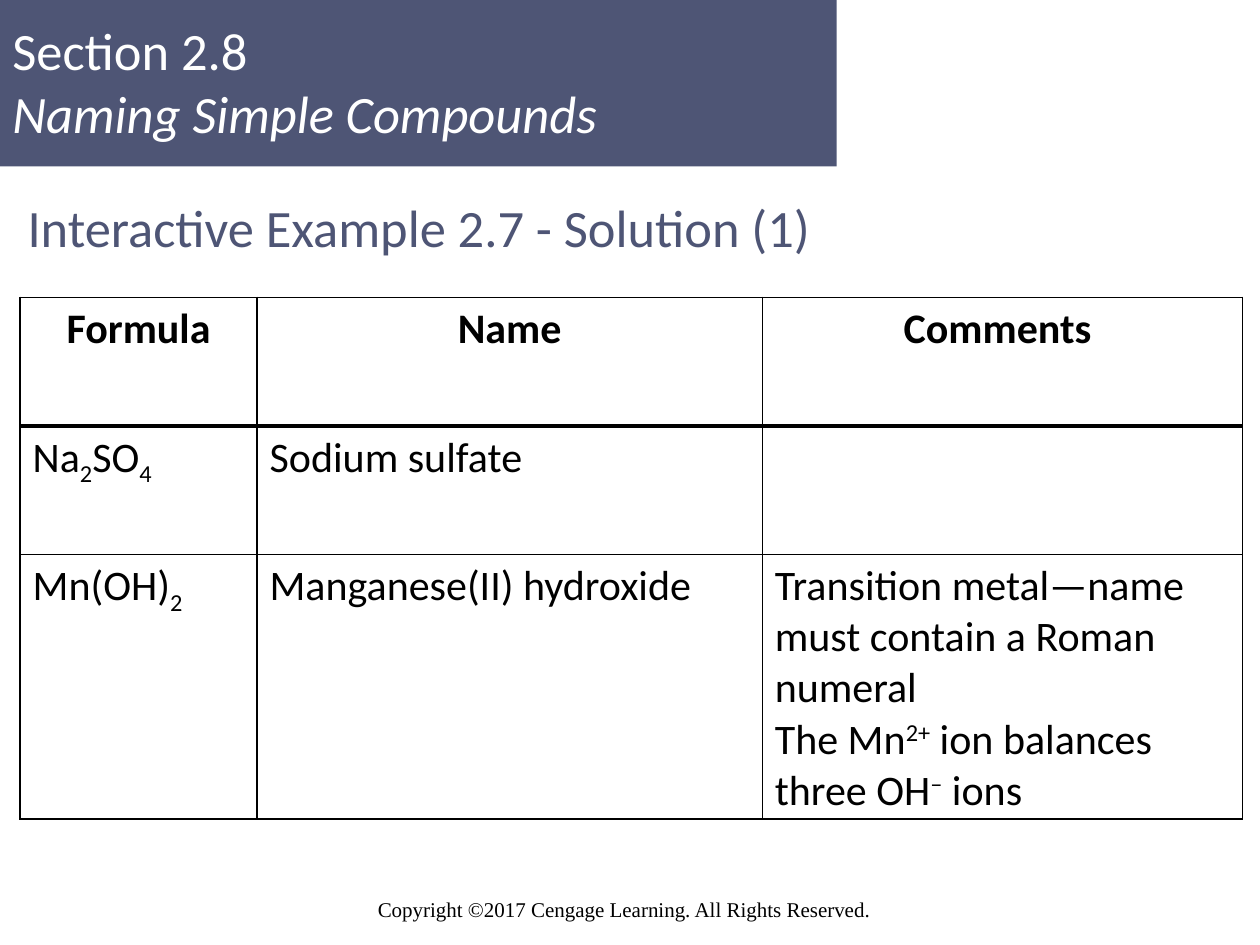
import pptx
import pptx.util
import pptx.dml.color
import pptx.enum.shapes
import pptx.enum.text
import pptx.oxml
import pptx.oxml.ns

SLATE = pptx.dml.color.RGBColor(0x4E, 0x55, 0x75)
WHITE = pptx.dml.color.RGBColor(0xFF, 0xFF, 0xFF)
BLACK = pptx.dml.color.RGBColor(0, 0, 0)

SLIDE_WIDTH, SLIDE_HEIGHT = 10, 7.5
SUBSCRIPT, SUPERSCRIPT = -25000, 30000
COLUMN_WIDTHS = (1.88, 4.01, 3.81)
ROW_HEIGHTS = (1.02, 1.02, 2.1)
HEADINGS = ("Formula", "Name", "Comments ")
COMPOUNDS = (
    ([[("Na", 0), ("2", SUBSCRIPT), ("SO", 0), ("4", SUBSCRIPT)]],
     [[("Sodium sulfate", 0)]],
     []),
    ([[("Mn(OH)", 0), ("2", SUBSCRIPT)]],
     [[("Manganese(II) hydroxide", 0)]],
     [[("Transition metal—name must contain a Roman numeral", 0)],
      [("The Mn", 0), ("2+", SUPERSCRIPT), (" ion balances three OH", 0),
       ("–", SUPERSCRIPT), (" ions", 0)]]),
)


def inches(box):
    return [pptx.util.Inches(length) for length in box]


def style(paragraph, size, color, face="Calibri", bold=False, italic=False):
    font = paragraph.font
    font.name, font.size = face, pptx.util.Pt(size)
    font.bold, font.italic = bold, italic
    font.color.rgb = color


def add_lines(slide, box, lines, size, color, face="Calibri",
              anchor=pptx.enum.text.MSO_ANCHOR.MIDDLE):
    frame = slide.shapes.add_textbox(*inches(box)).text_frame
    frame.word_wrap = True
    frame.vertical_anchor = anchor
    for index, (line, italic) in enumerate(lines):
        paragraph = frame.add_paragraph() if index else frame.paragraphs[0]
        paragraph.text = line
        style(paragraph, size, color, face, italic=italic)


def add_section_banner(slide, box):
    left, top, width, height = box
    banner = slide.shapes.add_shape(
        pptx.enum.shapes.MSO_SHAPE.RECTANGLE, *inches(box))
    banner.shadow.inherit = False
    banner.fill.solid()
    banner.fill.fore_color.rgb = SLATE
    banner.line.fill.background()
    add_lines(slide, (left, top, width * 1.2, height * 0.97),
              [("Section 2.8", False), ("Naming Simple Compounds", True)],
              30, WHITE)


def set_borders(cell, widths):
    properties = cell._tc.get_or_add_tcPr()
    for side, width in zip("LRTB", widths):
        properties.append(pptx.oxml.parse_xml(
            f'<a:ln{side} {pptx.oxml.ns.nsdecls("a")} w="{pptx.util.Pt(width)}">'
            f'<a:solidFill><a:srgbClr val="{BLACK}"/></a:solidFill></a:ln{side}>'))


def fill_cell(cell, paragraphs, heading):
    for index, pieces in enumerate(paragraphs):
        frame = cell.text_frame
        paragraph = frame.add_paragraph() if index else frame.paragraphs[0]
        if heading:
            paragraph.alignment = pptx.enum.text.PP_ALIGN.CENTER
        style(paragraph, 24, BLACK, bold=heading)
        for text, baseline in pieces:
            run = paragraph.add_run()
            run.text = text
            if baseline:
                run._r.get_or_add_rPr().set("baseline", str(baseline))


def add_compound_table(slide, box):
    rows = [[[[(heading, 0)]] for heading in HEADINGS], *COMPOUNDS]
    table = slide.shapes.add_table(
        len(rows), len(HEADINGS), *inches(box)).table
    for column, share in zip(table.columns, COLUMN_WIDTHS):
        column.width = pptx.util.Inches(box[2] * share / sum(COLUMN_WIDTHS))
    for row, share in zip(table.rows, ROW_HEIGHTS):
        row.height = pptx.util.Inches(box[3] * share / sum(ROW_HEIGHTS))
    for row_index, row in enumerate(rows):
        for column_index, paragraphs in enumerate(row):
            cell = table.cell(row_index, column_index)
            set_borders(cell, (1, 1, 3 if row_index == 1 else 1,
                               3 if row_index == 0 else 1))
            cell.fill.solid()
            cell.fill.fore_color.rgb = WHITE
            fill_cell(cell, paragraphs, row_index == 0)


def main():
    deck = pptx.Presentation()
    deck.slide_width = pptx.util.Inches(SLIDE_WIDTH)
    deck.slide_height = pptx.util.Inches(SLIDE_HEIGHT)
    slide = deck.slides.add_slide(deck.slide_layouts[6])
    add_section_banner(slide, (0, 0, 6.64, 1.32))
    add_lines(slide, (2.9, 7.07, 4.17, 0.3),
              [("Copyright ©2017 Cengage Learning. All Rights Reserved.", False)],
              12, BLACK, "Times New Roman", pptx.enum.text.MSO_ANCHOR.TOP)
    add_lines(slide, (0.12, 1.42, 9.68, 0.76),
              [("Interactive Example 2.7 - Solution (1)", False)], 30, SLATE)
    add_compound_table(slide, (0.16, 2.36, 9.7, 4.14))
    deck.save("out.pptx")


if __name__ == "__main__":
    main()
